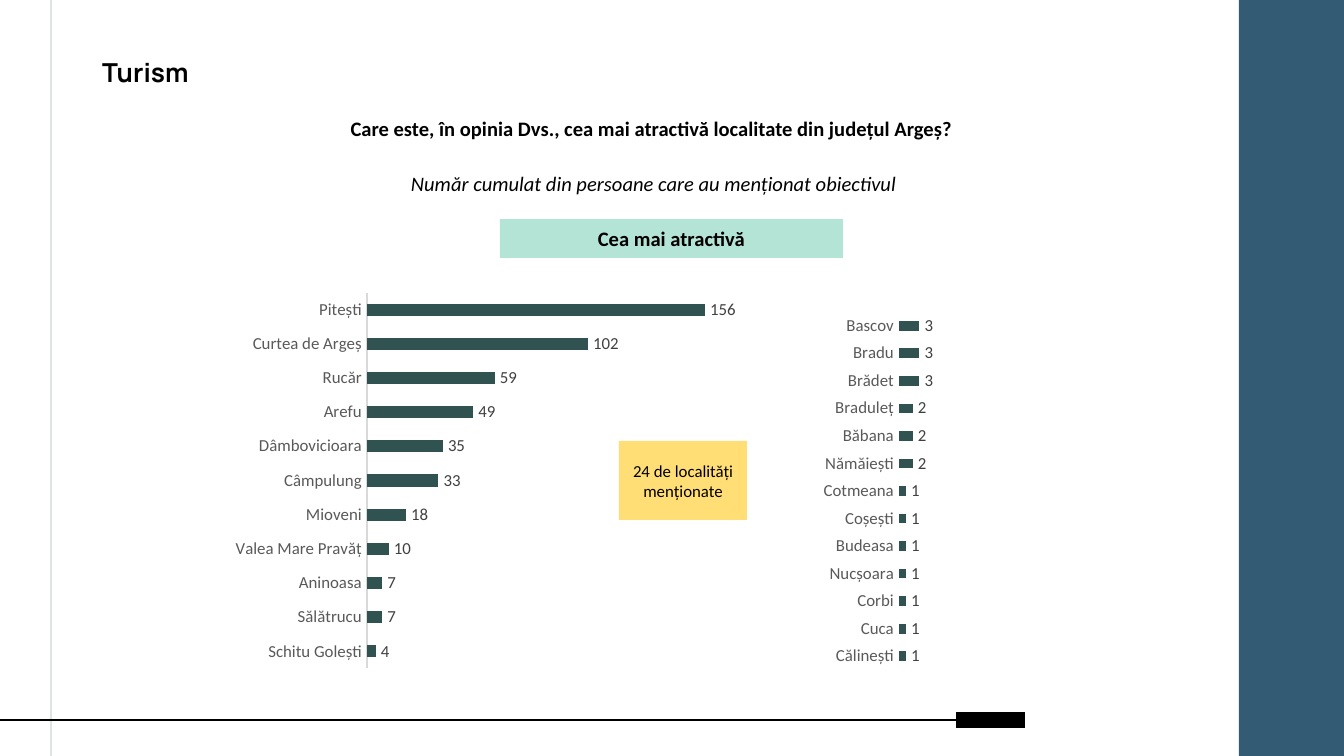
from lxml.etree import SubElement
from pptx import Presentation
from pptx.chart.data import CategoryChartData
from pptx.dml.color import RGBColor
from pptx.enum.chart import XL_CHART_TYPE as ChartType, XL_LABEL_POSITION as LabelPosition
from pptx.enum.chart import XL_TICK_MARK as TickMark
from pptx.enum.shapes import MSO_CONNECTOR as Connector, MSO_SHAPE as Shape
from pptx.enum.text import MSO_ANCHOR as Anchor, PP_ALIGN as Align
from pptx.oxml import parse_xml
from pptx.oxml.ns import nsdecls, qn
from pptx.util import Emu, Pt

COLORS = {
    "band": "335B74", "guide": "DFE3E5", "black": "000000", "mint": "B3E4D6",
    "yellow": "FFDE75", "bar": "305250", "axis": "D9D9D9",
    "category": "595959", "value": "404040",
}
EMU_PER_PX = 914400 / 134.4

MAIN_TOWNS = {
    "Pitești": 156, "Curtea de Argeș": 102, "Rucăr": 59, "Arefu": 49,
    "Dâmbovicioara": 35, "Câmpulung": 33, "Mioveni": 18,
    "Valea Mare Pravăț": 10, "Aninoasa": 7, "Sălătrucu": 7, "Schitu Golești": 4,
}
# The unnamed first entry is an unfilled spacer row.
OTHER_TOWNS = {
    "": 40, "Bascov": 3, "Bradu": 3, "Brădet": 3, "Braduleț": 2, "Băbana": 2,
    "Nămăiești": 2, "Cotmeana": 1, "Coșești": 1, "Budeasa": 1, "Nucșoara": 1,
    "Corbi": 1, "Cuca": 1, "Călinești": 1,
}


def px(*lengths):
    return [Emu(round(length * EMU_PER_PX)) for length in lengths]


def color(name):
    return RGBColor.from_string(COLORS[name])


def set_font(font, size, name="Calibri", ink="black", bold=False, italic=False):
    font.size, font.name = Pt(size), name
    font.bold, font.italic = bold, italic
    font.color.rgb = color(ink)


def write_text(shape, text, align=Align.CENTER, anchor=Anchor.MIDDLE, **font_format):
    frame = shape.text_frame
    frame.word_wrap = True
    frame.vertical_anchor = anchor
    paragraph = frame.paragraphs[0]
    paragraph.alignment = align
    run = paragraph.add_run()
    run.text = text
    set_font(run.font, **font_format)


def add_text(slide, box, text, **text_format):
    shape = slide.shapes.add_textbox(*px(*box))
    write_text(shape, text, **text_format)
    return shape


def add_rectangle(slide, box, fill):
    shape = slide.shapes.add_shape(Shape.RECTANGLE, *px(*box))
    shape.shadow.inherit = False
    shape.fill.solid()
    shape.fill.fore_color.rgb = color(fill)
    shape.line.fill.background()
    return shape


def add_line(slide, ends, ink, width):
    line = slide.shapes.add_connector(Connector.STRAIGHT, *px(*ends))
    line.line.color.rgb = color(ink)
    line.line.width = Pt(width)
    SubElement(line._element.spPr, qn("a:effectLst"))


def set_plot_layout(chart, x, y, width, height):
    plot_area = chart._chartSpace.chart.plotArea
    for layout in plot_area.findall(qn("c:layout")):
        plot_area.remove(layout)
    values = {"x": x, "y": y, "w": width, "h": height}
    sizes = "".join(f'<c:{key} val="{value}"/>' for key, value in values.items())
    plot_area.insert(0, parse_xml(
        f'<c:layout {nsdecls("c")}><c:manualLayout><c:layoutTarget val="inner"/>'
        f'<c:xMode val="edge"/><c:yMode val="edge"/>{sizes}</c:manualLayout></c:layout>'))


def clear_point(series, index):
    """Leave a bar without fill and without a label."""
    series.points[index].format.fill.background()
    series.data_labels._element.insert(0, parse_xml(
        f'<c:dLbl {nsdecls("c")}><c:idx val="{index}"/><c:delete val="1"/></c:dLbl>'))


def add_bar_chart(slide, box, towns, maximum, layout, axis_line=True):
    data = CategoryChartData(number_format="#,##0")
    data.categories = list(towns)
    data.add_series("Series 1", list(towns.values()))
    chart = slide.shapes.add_chart(ChartType.BAR_CLUSTERED, *px(*box), data).chart
    chart.has_legend = chart.has_title = False
    set_font(chart.font, 10, "Arial")
    set_plot_layout(chart, *layout)

    categories = chart.category_axis
    categories.reverse_order = True
    categories.major_tick_mark = categories.minor_tick_mark = TickMark.NONE
    set_font(categories.tick_labels.font, 9, ink="category")
    if axis_line:
        categories.format.line.color.rgb = color("axis")
        categories.format.line.width = Pt(0.75)
    else:
        categories.format.line.fill.background()

    values = chart.value_axis
    values.minimum_scale, values.maximum_scale = 0, maximum
    values.has_major_gridlines = values.visible = False

    plot = chart.plots[0]
    plot.gap_width = 182
    plot.vary_by_categories = False
    series = plot.series[0]
    series.format.fill.solid()
    series.format.fill.fore_color.rgb = color("bar")
    labels = series.data_labels
    labels.show_value = True
    labels.position = LabelPosition.OUTSIDE_END
    labels.number_format, labels.number_format_is_linked = "#,##0", False
    set_font(labels.font, 9, ink="value")
    return series


def main():
    presentation = Presentation()
    presentation.slide_width, presentation.slide_height = px(1344, 756)
    slide = presentation.slides.add_slide(presentation.slide_layouts[6])

    add_rectangle(slide, (1239, 0, 105, 756), "band")
    add_line(slide, (51, 0, 51, 756), "guide", 0.75)
    add_line(slide, (1025, 720, 956, 720), "black", 9)
    add_line(slide, (956, 720, 0, 720), "black", 0.75)

    title = add_text(slide, (89, 43, 1133, 54), "Turism", align=Align.LEFT,
                     anchor=Anchor.TOP, size=14, name="Manrope", bold=True)
    title.text_frame.margin_top = title.text_frame.margin_bottom = px(13)[0]
    add_text(slide, (267, 109, 774, 38),
             "Care este, în opinia Dvs., cea mai atractivă localitate din județul Argeș? ",
             size=11, bold=True)
    add_text(slide, (267, 164, 774, 39),
             "Număr cumulat din persoane care au menționat obiectivul",
             size=11, italic=True)

    add_bar_chart(slide, (159, 288, 636, 386), MAIN_TOWNS, 180,
                  (0.327, 0.012, 0.613, 0.974))
    others = add_bar_chart(slide, (716, 277, 496, 396), OTHER_TOWNS, 45,
                           (0.369, 0.019, 0.613, 0.974), axis_line=False)
    clear_point(others, 0)

    heading = add_rectangle(slide, (500, 219, 343, 39), "mint")
    write_text(heading, "Cea mai atractivă", size=11, bold=True)
    note = add_rectangle(slide, (619, 441, 128, 79), "yellow")
    write_text(note, "24 de localități menționate", size=9)

    presentation.save("out.pptx")


if __name__ == "__main__":
    main()
